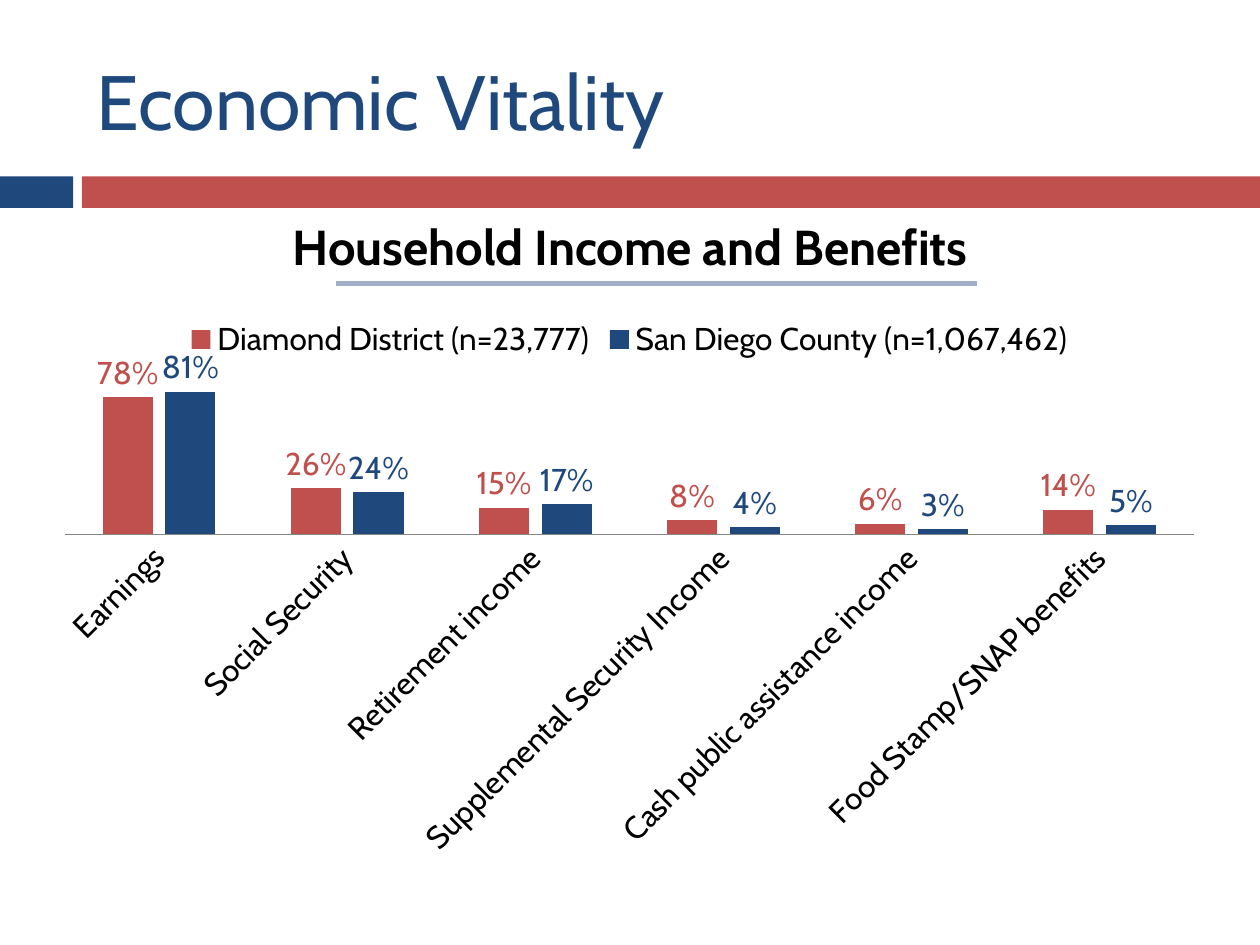
from lxml.etree import SubElement as Sub
from pptx import Presentation
from pptx.chart.data import CategoryChartData as Data
from pptx.dml.color import RGBColor as RGB
from pptx.enum.chart import XL_CHART_TYPE as Kind, XL_LABEL_POSITION as Spot
from pptx.enum.chart import XL_LEGEND_POSITION as Side, XL_TICK_MARK as Tick
from pptx.enum.chart import XL_TICK_LABEL_POSITION as Place
from pptx.enum.shapes import MSO_CONNECTOR as Link, MSO_SHAPE as Form
from pptx.enum.text import MSO_ANCHOR as Anchor, PP_ALIGN as Align
from pptx.oxml.ns import qn
from pptx.util import Inches, Pt

# Content
TITLE = "Economic Vitality"
HEAD = "Household Income and Benefits"
CATS = ["Earnings", "Social Security", "Retirement income",
        "Supplemental Security Income", "Cash public assistance income",
        "Food Stamp/SNAP benefits"]
SERIES = [
    ("Diamond District (n=23,777)", "red", (0.78, 0.26, 0.15, 0.08, 0.06, 0.14)),
    ("San Diego County (n=1,067,462)", "blue", (0.81, 0.24, 0.17, 0.04, 0.03, 0.05)),
]
BANDS = [(0, 0.58, "blue"), (0.65, 9.35, "red")]

THEME = {
    "font": "Cabin",
    "blue": RGB(0x1F, 0x49, 0x7D), "red": RGB(0xC0, 0x50, 0x4D),
    "black": RGB(0, 0, 0), "rule": RGB(0xA1, 0xAF, 0xC9),
    "axis": RGB(0x86, 0x86, 0x86),
    "title": 44, "head": 28, "chart": 18,
}


def style(font, size, color, bold=False):
    font.name, font.size, font.bold = THEME["font"], Pt(THEME[size]), bold
    font.color.rgb = THEME[color]


def label(slide, box, text, size, color, bold=False, align=Align.LEFT):
    frame = slide.shapes.add_textbox(*map(Inches, box)).text_frame
    frame.word_wrap = True
    frame.vertical_anchor = Anchor.MIDDLE
    para = frame.paragraphs[0]
    para.text, para.alignment = text, align
    style(para.font, size, color, bold)


def add_bars(slide):
    data = Data(number_format="0%")
    data.categories = CATS
    for name, _, vals in SERIES:
        data.add_series(name, vals)
    box = map(Inches, (0.33, 2.42, 9.33, 4.42))
    chart = slide.shapes.add_chart(Kind.COLUMN_CLUSTERED, *box, data).chart
    style(chart.font, "chart", "black")
    chart.has_title = False
    chart.has_legend = True
    chart.legend.position = Side.TOP
    chart.legend.include_in_layout = False

    # Axes: the plot sizes itself so the slanted labels fit in full
    base, scale = chart.category_axis, chart.value_axis
    base.major_tick_mark = base.minor_tick_mark = Tick.NONE
    base.tick_label_position = Place.NEXT_TO_AXIS
    base.format.line.color.rgb = THEME["axis"]
    style(base.tick_labels.font, "chart", "black")
    slant = base._element.find(qn("c:txPr")).find(qn("a:bodyPr"))
    slant.set("rot", "-2700000")
    slant.set("vert", "horz")
    scale.minimum_scale, scale.maximum_scale = 0, 0.9
    scale.has_major_gridlines = scale.visible = False
    scale.tick_labels.number_format = "0%"
    scale.tick_labels.number_format_is_linked = False

    # Columns and their values
    plot = chart.plots[0]
    plot.gap_width, plot.overlap, plot.vary_by_categories = 150, -25, False
    for bars, (_, color, _) in zip(plot.series, SERIES):
        bars.format.fill.solid()
        bars.format.fill.fore_color.rgb = THEME[color]
        tags = bars.data_labels
        tags.show_value, tags.position = True, Spot.OUTSIDE_END
        tags.number_format, tags.number_format_is_linked = "0%", False
        style(tags.font, "chart", color)


def main():
    deck = Presentation()
    deck.slide_width, deck.slide_height = Inches(10), Inches(7.5)
    slide = deck.slides.add_slide(deck.slide_layouts[6])

    # Colour bands
    for left, wide, color in BANDS:
        band = slide.shapes.add_shape(
            Form.RECTANGLE, *map(Inches, (left, 1.4, wide, 0.25)))
        band.shadow.inherit = False
        band.fill.solid()
        band.fill.fore_color.rgb = THEME[color]
        band.line.fill.background()

    # Headings
    label(slide, (0.67, 0.25, 8.92, 1.08), TITLE, "title", "blue")
    label(slide, (0, 1.67, 10, 0.57), HEAD, "head", "black", True, Align.CENTER)
    rule = slide.shapes.add_connector(
        Link.STRAIGHT, *map(Inches, (2.67, 2.25, 7.75, 2.25)))
    rule.line.color.rgb, rule.line.width = THEME["rule"], Pt(2.75)
    Sub(rule._element.spPr, qn("a:effectLst"))

    add_bars(slide)
    deck.save("out.pptx")


if __name__ == "__main__":
    main()
